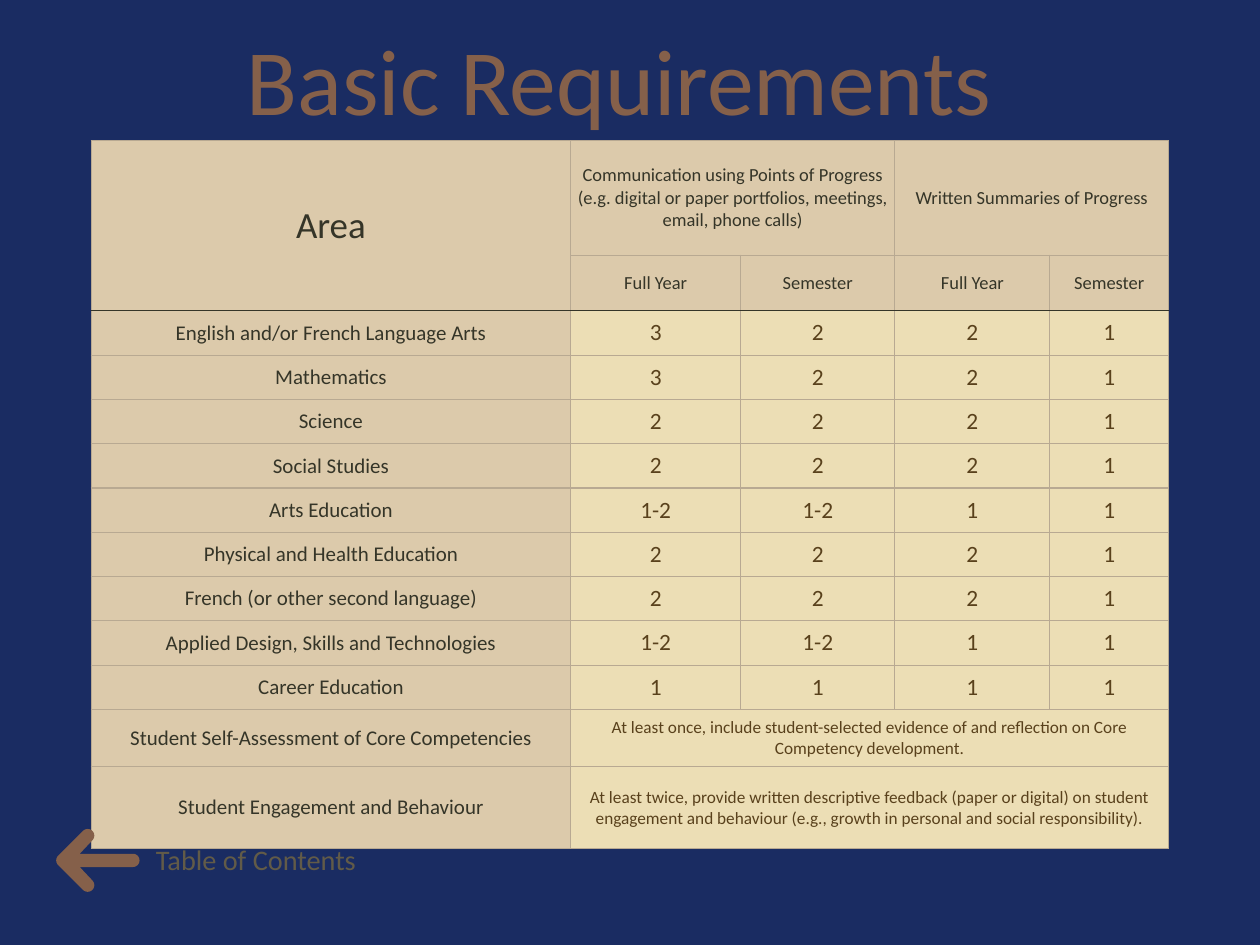
import math

import pptx
import pptx.dml.color
import pptx.enum.text
import pptx.oxml
import pptx.oxml.ns
import pptx.util

COLORS = {"navy": "1A2C62", "brown": "85604A", "olive": "625B48", "ink": "353528",
          "value": "59411C", "tan": "DCCAAB", "cream": "ECDEB5", "rule": "B8A992"}
FONT = "Calibri"
SLIDE_W, SLIDE_H = 14.22, 10.67

TITLE = "Basic Requirements"
BACK_LABEL = "Table of Contents"
GROUPS = ["Area",
          "Communication using Points of Progress (e.g. digital or paper portfolios, "
          "meetings, email, phone calls)", None,
          "Written Summaries of Progress", None]
TERMS = [None, "Full Year", "Semester", "Full Year", "Semester"]
AREAS = [
    ("English and/or French Language Arts", "3", "2", "2", "1"),
    ("Mathematics", "3", "2", "2", "1"),
    ("Science", "2", "2", "2", "1"),
    ("Social Studies", "2", "2", "2", "1"),
    ("Arts Education", "1-2", "1-2", "1", "1"),
    ("Physical and Health Education", "2", "2", "2", "1"),
    ("French (or other second language)", "2", "2", "2", "1"),
    ("Applied Design, Skills and Technologies", "1-2", "1-2", "1", "1"),
    ("Career Education", "1", "1", "1", "1"),
]
NOTES = [
    ("Student Self-Assessment of Core Competencies",
     "At least once, include student-selected evidence of and reflection on Core "
     "Competency development.", None, None, None),
    ("Student Engagement and Behaviour",
     "At least twice, provide written descriptive feedback (paper or digital) on student "
     "engagement and behaviour (e.g., growth in personal and social responsibility).",
     None, None, None),
]
ROWS = [GROUPS, TERMS, *AREAS, *NOTES]
HEADER_ROWS = 2
FIRST_NOTE = HEADER_ROWS + len(AREAS)
COL_WIDTHS = [5.41, 1.92, 1.74, 1.75, 1.34]
ROW_HEIGHTS = [1.29, 0.63] + [0.5] * len(AREAS) + [0.65, 0.92]
# first row, first column, last row, last column
MERGES = [(0, 0, 1, 0), (0, 1, 0, 2), (0, 3, 0, 4)] + [
    (FIRST_NOTE + i, 1, FIRST_NOTE + i, 4) for i in range(len(NOTES))]

INCH = pptx.util.Inches
INSET = INCH(0.06)
ALIGN = pptx.enum.text.PP_ALIGN
ANCHOR = pptx.enum.text.MSO_ANCHOR


def rgb(name):
    return pptx.dml.color.RGBColor.from_string(COLORS[name])


def write(frame, text, size, color, align=ALIGN.CENTER):
    paragraph = frame.paragraphs[0]
    paragraph.alignment = align
    run = paragraph.add_run()
    run.text = text
    run.font.size = pptx.util.Pt(size)
    run.font.name = FONT
    run.font.color.rgb = rgb(color)


def add_label(slide, box, text, anchor=ANCHOR.TOP, **style):
    frame = slide.shapes.add_textbox(*map(INCH, box)).text_frame
    frame.word_wrap = True
    frame.vertical_anchor = anchor
    frame.margin_left = frame.margin_right = INSET
    frame.margin_top = frame.margin_bottom = INSET
    write(frame, text, **style)


def set_borders(cell, top, bottom):
    sides = {"L": "rule", "R": "rule", "T": top, "B": bottom}
    for place, (side, color) in enumerate(sides.items()):
        line = pptx.oxml.parse_xml(
            f'<a:ln{side} {pptx.oxml.ns.nsdecls("a")} w="12700"><a:solidFill>'
            f'<a:srgbClr val="{COLORS[color]}"/></a:solidFill></a:ln{side}>')
        cell._tc.get_or_add_tcPr().insert(place, line)


def cell_style(row, col):
    """Text size and colour for a place in the table."""
    if row < HEADER_ROWS:
        return {"size": 15 if col else 30, "color": "ink"}
    if col == 0:
        return {"size": 17, "color": "ink"}
    return {"size": 19 if row < FIRST_NOTE else 14, "color": "value"}


def add_requirements(slide):
    table = slide.shapes.add_table(
        len(ROWS), len(COL_WIDTHS), INCH(1.03), INCH(1.59),
        INCH(sum(COL_WIDTHS)), INCH(sum(ROW_HEIGHTS))).table
    table.first_row = table.horz_banding = False
    for column, width in zip(table.columns, COL_WIDTHS):
        column.width = INCH(width)
    for row, height in zip(table.rows, ROW_HEIGHTS):
        row.height = INCH(height)
    for top, left, bottom, right in MERGES:
        table.cell(top, left).merge(table.cell(bottom, right))
    for r, texts in enumerate(ROWS):
        for c, text in enumerate(texts):
            cell = table.cell(r, c)
            cell.vertical_anchor = ANCHOR.MIDDLE
            cell.margin_left = cell.margin_right = INSET
            cell.margin_top = cell.margin_bottom = INSET
            cell.fill.solid()
            cell.fill.fore_color.rgb = rgb("tan" if r < HEADER_ROWS or c == 0 else "cream")
            ends_header = r == HEADER_ROWS - 1 or (r, c) == (0, 0)
            set_borders(cell, top="ink" if r == HEADER_ROWS else "rule",
                        bottom="ink" if ends_header else "rule")
            if text:
                write(cell.text_frame, text, **cell_style(r, c))


def arc(x, y, start, end, radius=0.075, steps=12):
    """Points of a round stroke end, with angles in degrees."""
    angles = [math.radians(start + (end - start) * i / steps) for i in range(steps + 1)]
    return [(x + radius * math.cos(a), y + radius * math.sin(a)) for a in angles]


def add_back_arrow(slide, tip=0.71, barb=0.99, tail=1.5, middle=9.715, reach=0.28, half=0.075):
    outline = (arc(barb, middle - reach, -135, 45) + [(0.9, middle - half)]
               + arc(tail, middle, -90, 90) + [(0.9, middle + half)]
               + arc(barb, middle + reach, -45, 135) + arc(tip, middle, 135, 225))
    start, *corners = [(INCH(x), INCH(y)) for x, y in outline]
    builder = slide.shapes.build_freeform(*start)
    builder.add_line_segments(corners, close=True)
    arrow = builder.convert_to_shape()
    arrow.shadow.inherit = False
    arrow.fill.solid()
    arrow.fill.fore_color.rgb = rgb("brown")
    arrow.line.fill.background()


def main():
    deck = pptx.Presentation()
    deck.slide_width, deck.slide_height = INCH(SLIDE_W), INCH(SLIDE_H)
    slide = deck.slides.add_slide(deck.slide_layouts[6])
    slide.background.fill.solid()
    slide.background.fill.fore_color.rgb = rgb("navy")
    add_label(slide, (1.08, 0.08, 11.81, 1.6), TITLE, anchor=ANCHOR.MIDDLE,
              size=76, color="brown")
    add_requirements(slide)
    add_back_arrow(slide)
    add_label(slide, (1.7, 9.45, 2.67, 0.52), BACK_LABEL, size=23, color="olive",
              align=ALIGN.LEFT)
    deck.save("out.pptx")


if __name__ == "__main__":
    main()
